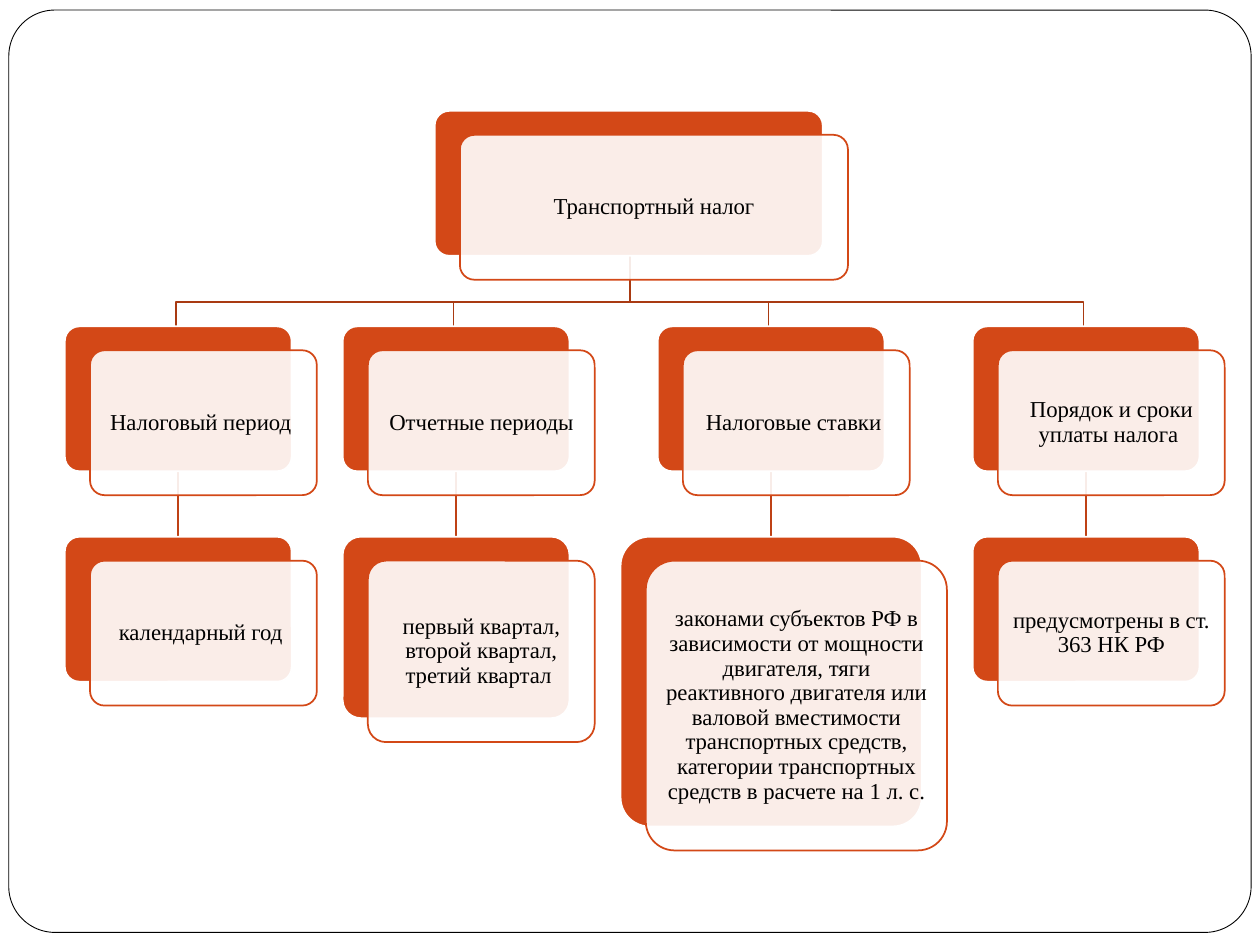
from typing import NamedTuple

from lxml import etree
from pptx import Presentation
from pptx import util as u
from pptx.dml.color import RGBColor
from pptx.enum import shapes, text
from pptx.oxml.ns import qn

# The slide is a grid of 100 columns by 75 rows.
COLUMNS, ROWS = 100, 75
CELL = u.Inches(0.1)

ACCENT, ELBOW, STEM = "D34817", "A93A12", "BF4115"
WHITE, BLACK = "FFFFFF", "000000"
FONT, FONT_SIZE = "Times New Roman", 13

SHIFT_X, SHIFT_Y = 2, 1.9
CARD_WIDTH, CARD_HEIGHT = 18, 11.5
ROOT_TOP, TOPIC_TOP, DETAIL_TOP = 8.8, 25.9, 42.6
BUS_ROW = 24.2


class Card(NamedTuple):
    label: str
    center: float
    top: float
    width: float = CARD_WIDTH
    height: float = CARD_HEIGHT

    @property
    def left(self) -> float:
        return self.center - self.width / 2

    @property
    def bottom(self) -> float:
        return self.top + self.height


class Branch(NamedTuple):
    topic: Card
    detail: Card


def make_branch(center: float, topic: str, detail: str,
                width: float = CARD_WIDTH, height: float = CARD_HEIGHT) -> Branch:
    return Branch(Card(topic, center, TOPIC_TOP),
                  Card(detail, center, DETAIL_TOP, width, height))


ROOT = Card("Транспортный налог", 49.9, ROOT_TOP, 30.8)
BRANCHES = [
    make_branch(14.15, "Налоговый период ", "календарный год "),
    make_branch(36.2, "Отчетные периоды",
                "первый квартал, второй квартал, третий квартал ", height=14.4),
    make_branch(61.2, "Налоговые ставки ",
                "законами субъектов РФ в зависимости от мощности двигателя, тяги "
                "реактивного двигателя или валовой вместимости транспортных средств, "
                "категории транспортных средств в расчете на 1 л. с.", 23.9, 23),
    make_branch(86.2, "Порядок и сроки уплаты налога ",
                "предусмотрены в ст. 363 НК РФ"),
]


def cells(count: float) -> int:
    return round(count * CELL)


def paint(color_format, color: str) -> None:
    color_format.rgb = RGBColor.from_string(color)


def set_line(item, color: str, points: float) -> None:
    paint(item.line.fill.fore_color if item.line.fill.solid() else item.line.color, color)
    item.line.width = u.Pt(points)


def add_rounded(page, left: float, top: float, width: float, height: float,
                rounding: float, fill: str, line: str, points: float):
    box = page.shapes.add_shape(shapes.MSO_SHAPE.ROUNDED_RECTANGLE,
                                *map(cells, (left, top, width, height)))
    box.adjustments[0] = rounding
    box.shadow.inherit = False
    box.fill.solid()
    paint(box.fill.fore_color, fill)
    set_line(box, line, points)
    return box


def set_opacity(box, percent: int) -> None:
    color = box.fill._xPr.find(qn("a:solidFill"))[0]
    etree.SubElement(color, qn("a:alpha"), val=str(percent * 1000))


def write_label(box, label: str) -> None:
    frame = box.text_frame
    frame.text = label
    frame.word_wrap = True
    frame.vertical_anchor = text.MSO_ANCHOR.MIDDLE
    frame.margin_left = frame.margin_right = u.Inches(0.05)
    frame.margin_top = frame.margin_bottom = u.Inches(0.05)
    para = frame.paragraphs[0]
    para.alignment = text.PP_ALIGN.CENTER
    para.line_spacing = 0.9
    span = para.runs[0]
    span.font.name = FONT
    span.font.size = u.Pt(FONT_SIZE)
    paint(span.font.color, BLACK)


def add_card(page, card: Card) -> None:
    """Draw a solid back plate and a translucent, labelled front plate."""
    add_rounded(page, card.left, card.top, card.width, card.height,
                0.1, ACCENT, WHITE, 1)
    front = add_rounded(page, card.left + SHIFT_X, card.top + SHIFT_Y,
                        card.width, card.height, 0.1, WHITE, ACCENT, 1)
    set_opacity(front, 90)
    write_label(front, card.label)


def add_stem(page, branch: Branch) -> None:
    x = cells(branch.topic.center)
    stem = page.shapes.add_connector(shapes.MSO_CONNECTOR.STRAIGHT,
                                     x, cells(branch.topic.bottom),
                                     x, cells(branch.detail.top))
    set_line(stem, STEM, 1)
    etree.SubElement(stem._element.spPr, qn("a:effectLst"))


def add_elbow(page, parent: Card, child: Card) -> None:
    builder = page.shapes.build_freeform(parent.center, parent.bottom, scale=CELL)
    builder.add_line_segments([(parent.center, BUS_ROW), (child.center, BUS_ROW),
                               (child.center, child.top)], close=False)
    elbow = builder.convert_to_shape()
    elbow.shadow.inherit = False
    elbow.fill.background()
    set_line(elbow, ELBOW, 1)


def main() -> None:
    deck = Presentation()
    deck.slide_width, deck.slide_height = cells(COLUMNS), cells(ROWS)
    page = deck.slides.add_slide(deck.slide_layouts[6])
    add_rounded(page, 0.7, 0.8, 98.6, 73.2, 0.05, WHITE, BLACK, 0.5)
    for branch in reversed(BRANCHES):
        add_stem(page, branch)
        add_elbow(page, ROOT, branch.topic)
    add_card(page, ROOT)
    for branch in BRANCHES:
        add_card(page, branch.topic)
        add_card(page, branch.detail)
    deck.save("out.pptx")


if __name__ == "__main__":
    main()
